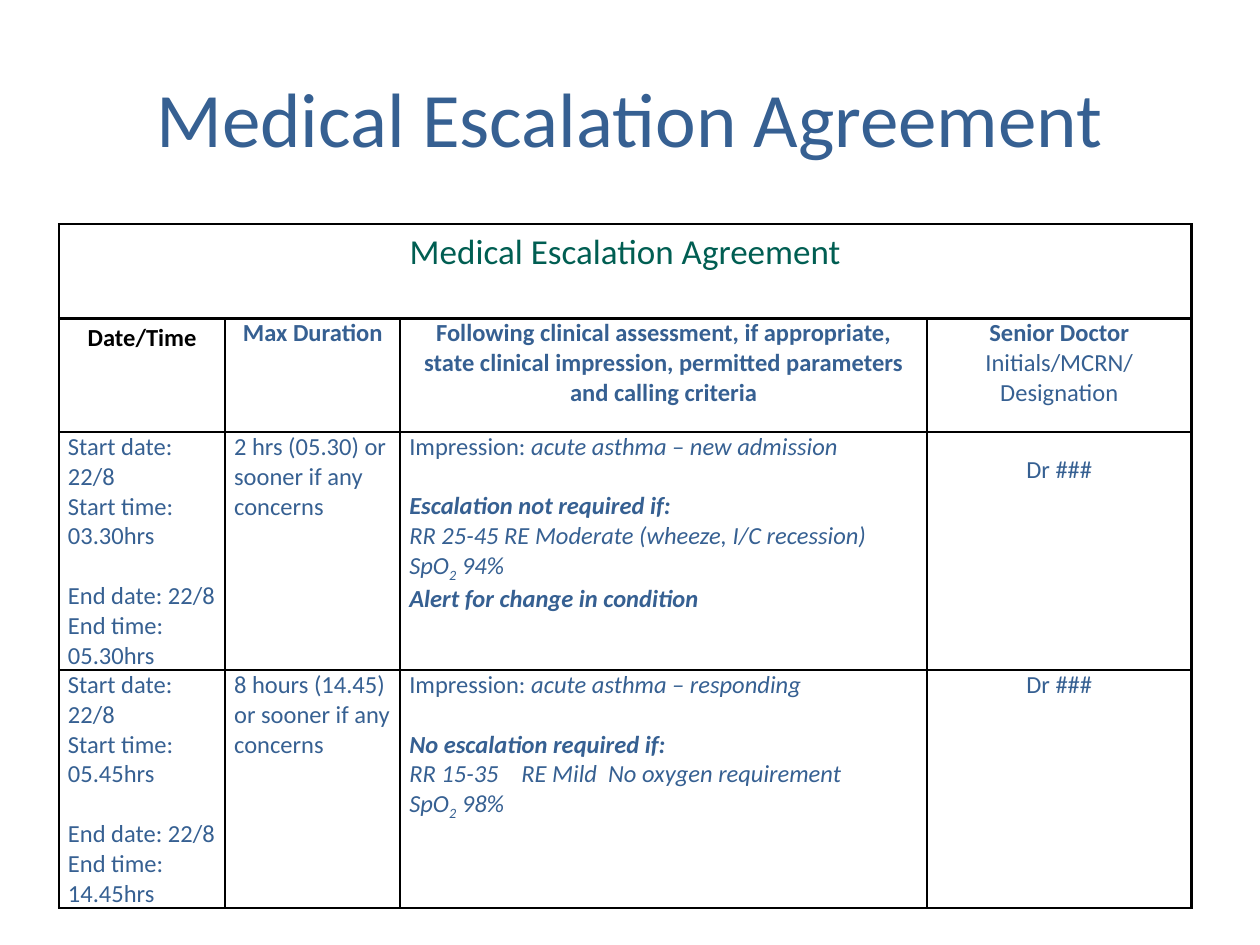
from lxml import etree
from pptx import Presentation
from pptx import util as u
from pptx.dml.color import RGBColor
from pptx.enum import text
from pptx.oxml.ns import qn

Cm, Pt = u.Cm, u.Pt
FONT = "Calibri"
HEX = {"blue": "366092", "green": "005E52", "black": "000000"}
MID, LEFT = text.PP_ALIGN.CENTER, text.PP_ALIGN.LEFT
GAP = 17  # one line of 14 pt text
COLS = [3.35, 3.53, 10.62, 5.33]
ROWS = [1.9, 2.29, 4.8, 4.8]


def add_run(para, words, style="", size=14, tint="blue"):
    """Style letters: b bold, i italic, s subscript."""
    run = para.add_run()
    run.text = words
    font = run.font
    font.name, font.size = FONT, Pt(size)
    font.bold, font.italic = "b" in style, "i" in style
    font.color.rgb = RGBColor.from_string(HEX[tint])
    if "s" in style:
        run._r.get_or_add_rPr().set("baseline", "-25000")


def set_tabs(para, stops):
    tabs = etree.SubElement(para._p.get_or_add_pPr(), qn("a:tabLst"))
    for stop in stops:
        etree.SubElement(tabs, qn("a:tab"), pos=str(Cm(stop)), algn="l")


def fill_text(frame, paras, align=LEFT, lead=None):
    """Each paragraph is a list of runs; a number at its head is space before."""
    for i, runs in enumerate(paras):
        para = frame.paragraphs[0] if i == 0 else frame.add_paragraph()
        para.alignment = align
        if lead:
            para.line_spacing = lead
        if not isinstance(runs[0], tuple):
            para.space_before = Pt(runs[0])
            runs = runs[1:]
        if any("\t" in run[0] for run in runs):
            set_tabs(para, [2.26, 4.01])
        for run in runs:
            add_run(para, *run)


def add_edges(cell):
    props = cell._tc.get_or_add_tcPr()
    for i, side in enumerate(("lnL", "lnR", "lnT", "lnB")):
        line = etree.Element(qn("a:" + side), w=str(Pt(1.5)))
        fill = etree.SubElement(line, qn("a:solidFill"))
        etree.SubElement(fill, qn("a:srgbClr"), val=HEX["black"])
        props.insert(i, line)


def add_title(slide):
    box = slide.shapes.add_textbox(Cm(1.27), Cm(0.76), Cm(22.86), Cm(3.18))
    frame = box.text_frame
    frame.word_wrap = True
    frame.vertical_anchor = text.MSO_ANCHOR.MIDDLE
    fill_text(frame, [[("Medical Escalation Agreement", "", 44)]], MID)


def add_grid(slide):
    frame = slide.shapes.add_table(len(ROWS), len(COLS), Cm(1.19), Cm(4.52),
                                   Cm(sum(COLS)), Cm(sum(ROWS)))
    table = frame.table
    table.first_row = table.horz_banding = False
    for col, wide in zip(table.columns, COLS):
        col.width = Cm(wide)
    for row, high in zip(table.rows, ROWS):
        row.height = Cm(high)
    for cell in table.iter_cells():
        cell.margin_left = cell.margin_right = Cm(0.18)
        cell.margin_top = cell.margin_bottom = 0
        cell.fill.background()
        add_edges(cell)
    table.cell(0, 0).merge(table.cell(0, len(COLS) - 1))
    return table


def dates(start, end):
    return [[("Start date: 22/8",)], [(f"Start time: {start}hrs",)],
            [GAP, ("End date: 22/8",)], [(f"End time: {end}hrs",)]]


def sats(value):
    return [("SpO", "i"), ("2", "is"), (f" {value}%", "i")]


def add_heads(table):
    fill_text(table.cell(0, 0).text_frame,
              [[("Medical Escalation Agreement", "", 20, "green")]], MID, 1.15)
    fill_text(table.cell(1, 0).text_frame,
              [[("Date/Time", "b", 14, "black")]], MID, 1.15)
    heads = [
        [[("Max Duration", "b")]],
        [[("Following clinical assessment, if appropriate, state clinical "
           "impression, permitted parameters and calling criteria", "b")]],
        [[("Senior Doctor", "b")], [("Initials/MCRN/Designation",)]],
    ]
    for i, head in enumerate(heads, 1):
        fill_text(table.cell(1, i).text_frame, head, MID)


def add_rows(table):
    first = [
        dates("03.30", "05.30"),
        [[("2 hrs (05.30) or sooner if any concerns",)]],
        [[("Impression:",), (" acute asthma – new admission", "i")],
         [GAP, ("Escalation not required if:", "bi")],
         [("RR 25-45 RE Moderate (wheeze, I/C recession) ", "i")] + sats(94),
         [("Alert for change in condition", "bi")]],
    ]
    second = [
        dates("05.45", "14.45"),
        [[("8 hours (14.45)",)], [("or sooner if any concerns",)]],
        [[("Impression:",), (" acute asthma – responding", "i")],
         [GAP, ("No escalation required if:", "bi")],
         [("RR 15-35\tRE Mild\tNo oxygen requirement", "i")],
         sats(98)],
    ]
    for r, row in enumerate((first, second), 2):
        for c, paras in enumerate(row):
            fill_text(table.cell(r, c).text_frame, paras)
        fill_text(table.cell(r, 3).text_frame, [[("Dr ###",)]], MID)
    table.cell(2, 3).margin_top = Cm(0.47)


def main():
    deck = Presentation()
    deck.slide_width, deck.slide_height = Cm(25.4), Cm(19.05)
    slide = deck.slides.add_slide(deck.slide_layouts[6])
    # Heading
    add_title(slide)
    # Agreement table
    table = add_grid(slide)
    add_heads(table)
    add_rows(table)
    deck.save("out.pptx")


if __name__ == "__main__":
    main()
